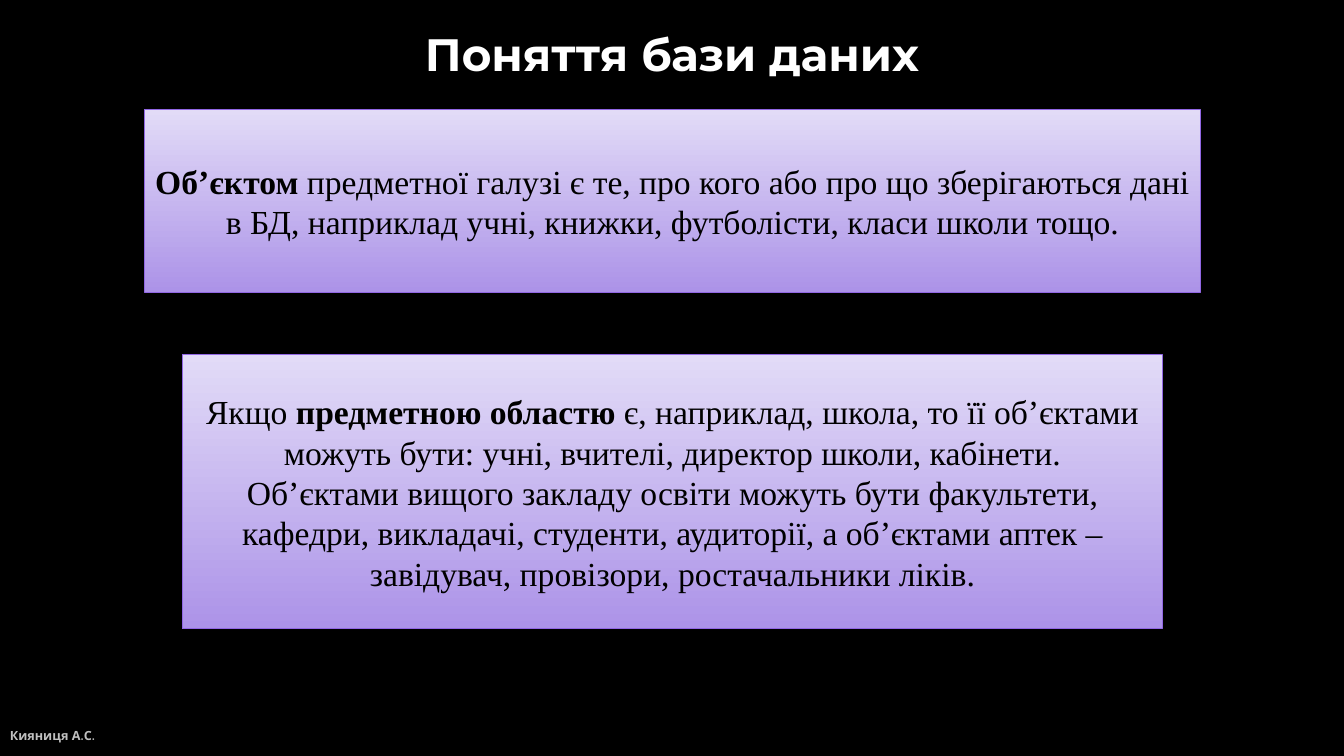
import pptx
import pptx.util
import pptx.dml.color
import pptx.enum.shapes
import pptx.enum.text

Inches = pptx.util.Inches
ALIGN = pptx.enum.text.PP_ALIGN
ANCHOR = pptx.enum.text.MSO_ANCHOR


def color(hex_text):
    return pptx.dml.color.RGBColor.from_string(hex_text)


def style(span, font, size, hex_text, bold):
    span.font.name = font
    span.font.size = pptx.util.Pt(size)
    span.font.color.rgb = color(hex_text)
    span.font.bold = bold


deck = pptx.Presentation()
deck.slide_width = Inches(13.33)
deck.slide_height = Inches(7.5)
page = deck.slides.add_slide(deck.slide_layouts[6])
page.background.fill.solid()
page.background.fill.fore_color.rgb = color("000000")

# Title and author: place, text, font, size, colour, alignment, anchor, top inset, spacing
labels = [
    ((1.25, 0.29, 10.83, 0.94), "Поняття бази даних", "Montserrat", 32.4, "FFFFFF",
     ALIGN.CENTER, ANCHOR.TOP, 0.03, 0.9),
    ((0, 7.1, 8.25, 0.4), "Кияниця А.С.", "Quicksand", 9, "BFBFBF",
     ALIGN.LEFT, ANCHOR.MIDDLE, 0.05, 1.0),
]
for place, text, font, size, hex_text, align, anchor, inset, spacing in labels:
    box = page.shapes.add_textbox(*map(Inches, place))
    frame = box.text_frame
    frame.word_wrap = True
    frame.vertical_anchor = anchor
    frame.margin_top = Inches(inset)
    frame.text = text
    para = frame.paragraphs[0]
    para.alignment = align
    para.line_spacing = spacing
    style(para.runs[0], font, size, hex_text, True)

# Definition panels: place, then paragraphs made of (text, bold) spans
panels = [
    ((1.43, 1.09, 10.48, 1.81), [
        [("Об’єктом ", True),
         ("предметної галузі є те, про кого або про що зберігаються дані в БД, "
          "наприклад учні, книжки, футболісти, класи школи тощо.", False)],
    ]),
    ((1.81, 3.52, 9.72, 2.72), [
        [("Якщо ", False),
         ("предметною областю ", True),
         ("є, наприклад, школа, то її об’єктами можуть бути: учні, вчителі, "
          "директор школи, кабінети.", False)],
        [("Об’єктами вищого закладу освіти можуть бути факультети, кафедри, "
          "викладачі, студенти, аудиторії, а об’єктами аптек – завідувач, "
          "провізори, ростачальники ліків.", False)],
    ]),
]
for place, paragraphs in panels:
    box = page.shapes.add_shape(
        pptx.enum.shapes.MSO_SHAPE.RECTANGLE, *map(Inches, place))
    box.shadow.inherit = False
    box.fill.gradient()
    box.fill.gradient_angle = 270
    for stop, hex_text in zip(box.fill.gradient_stops, ("E2DBF7", "AC93E8")):
        stop.color.rgb = color(hex_text)
    box.line.color.rgb = color("9167E3")
    box.line.width = pptx.util.Pt(0.75)
    frame = box.text_frame
    frame.word_wrap = True
    frame.vertical_anchor = ANCHOR.MIDDLE
    for index, spans in enumerate(paragraphs):
        para = frame.add_paragraph() if index else frame.paragraphs[0]
        para.alignment = ALIGN.CENTER
        for text, bold in spans:
            span = para.add_run()
            span.text = text
            style(span, "Times New Roman", 24, "000000", bold)

deck.save("out.pptx")
